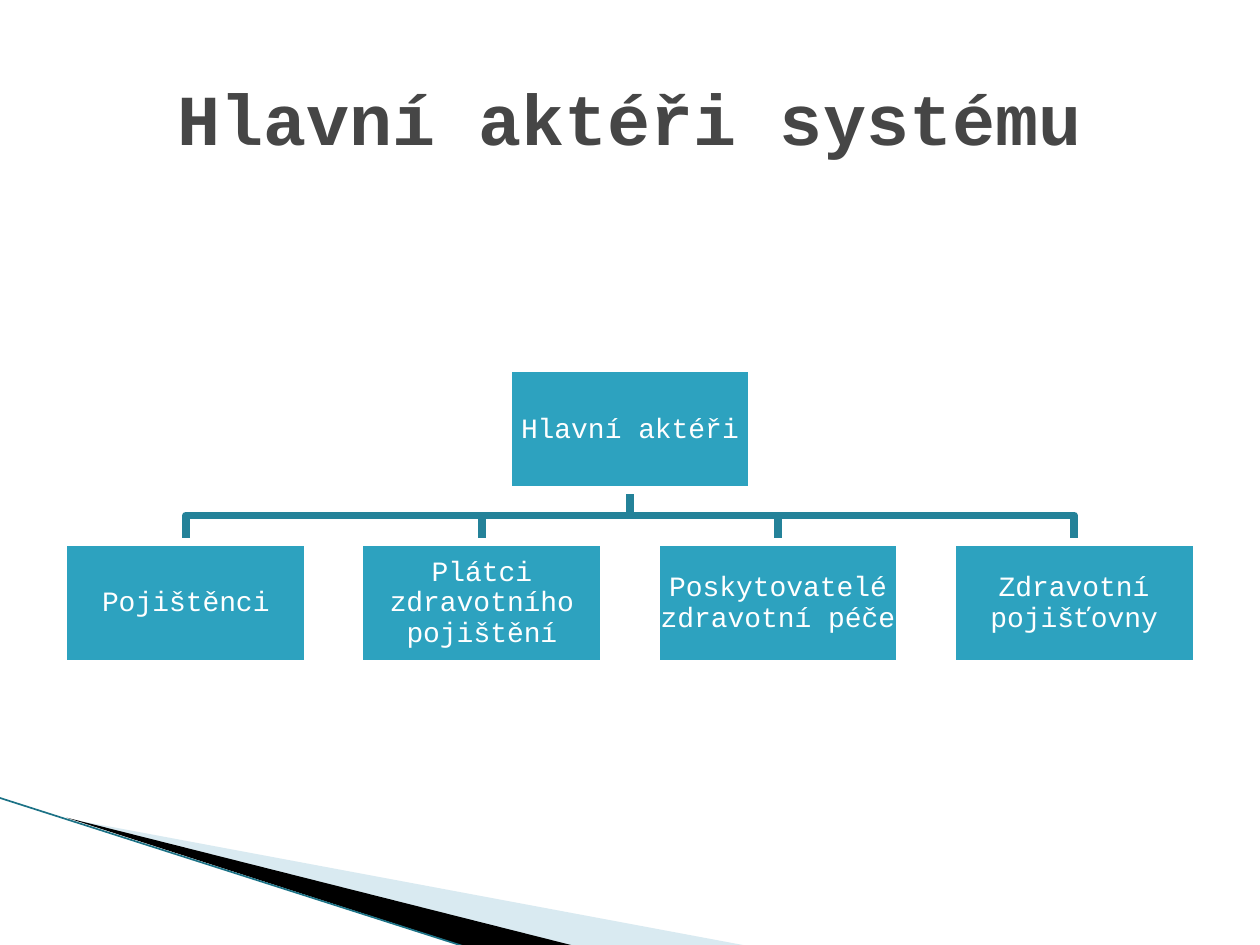
"""Build the slide with the organisation chart of the main actors of the system."""
from lxml import etree
from pptx import Presentation
from pptx.dml.color import RGBColor
from pptx.enum.shapes import MSO_CONNECTOR, MSO_SHAPE
from pptx.enum.text import MSO_ANCHOR, MSO_AUTO_SIZE, PP_ALIGN
from pptx.oxml.ns import qn
from pptx.util import Inches, Pt

THEME = {
    "title": RGBColor(0x46, 0x46, 0x46),
    "box": RGBColor(0x2D, 0xA2, 0xBF),
    "branch": RGBColor(0x24, 0x82, 0x99),
    "white": RGBColor(0xFF, 0xFF, 0xFF),
    "pale": RGBColor(0xA0, 0xCB, 0xDC),
    "dark": RGBColor(0, 0, 0),
    "edge": RGBColor(0x1C, 0x72, 0x86),
    "font": "Courier New",
    "title_size": Pt(41),
    "box_size": Pt(16),
    "chart_line": Pt(4.33),
    "edge_line": Pt(0.95),
}


def draw_outline(shapes, points, closed):
    start, *rest = [(Inches(x), Inches(y)) for x, y in points]
    builder = shapes.build_freeform(*start)
    builder.add_line_segments(rest, close=closed)
    outline = builder.convert_to_shape()
    outline.shadow.inherit = False
    return outline


def write_text(frame, text, frame_format, font_format, color):
    for name, value in frame_format.items():
        setattr(frame, name, value)
    frame.text = text
    paragraph = frame.paragraphs[0]
    paragraph.alignment = PP_ALIGN.CENTER
    for name, value in font_format.items():
        setattr(paragraph.runs[0].font, name, value)
    paragraph.runs[0].font.color.rgb = color
    return paragraph


prs = Presentation()
prs.slide_width, prs.slide_height = Inches(10), Inches(7.5)
slide = prs.slides.add_slide(prs.slide_layouts[5])
shapes = slide.shapes

heading = shapes.title
place = {"left": Inches(0.5), "top": Inches(0.3), "width": Inches(9), "height": Inches(1.25)}
for name, value in place.items():
    setattr(heading, name, value)
title_frame = {"vertical_anchor": MSO_ANCHOR.MIDDLE, "word_wrap": True,
               "auto_size": MSO_AUTO_SIZE.NONE}
title_font = {"name": THEME["font"], "size": THEME["title_size"], "bold": True}
write_text(heading.text_frame, "Hlavní aktéři systému", title_frame, title_font, THEME["title"])

wedges = [
    ("pale", [(0.55, 6.5), (5.95, 7.51), (4.56, 7.51)]),
    ("dark", [(0.53, 6.49), (4.57, 7.51), (3.72, 7.52)]),
]
for tone, corners in wedges:
    wedge = draw_outline(shapes, corners, True)
    wedge.fill.solid()
    wedge.fill.fore_color.rgb = THEME[tone]
    wedge.line.fill.background()
    if tone == "pale":
        color = wedge.fill._xPr.find(".//" + qn("a:srgbClr"))
        etree.SubElement(color, qn("a:alpha"), val="40000")

edge = shapes.add_connector(MSO_CONNECTOR.STRAIGHT, Inches(-0.01), Inches(6.33),
                            Inches(3.71), Inches(7.52))
edge.line.color.rgb = THEME["edge"]
edge.line.width = THEME["edge_line"]
etree.SubElement(edge._element.spPr, qn("a:effectLst"))

actors = ["Pojištěnci", "Plátci zdravotního pojištění",
          "Poskytovatelé zdravotní péče", "Zdravotní pojišťovny"]
box_width, box_height, pitch, center = 1.94, 0.97, 2.35, 5
root_top, actor_top, bus = 2.92, 4.3, 4.09
middles = [center + pitch * (i - (len(actors) - 1) / 2) for i in range(len(actors))]

for middle in middles:
    route = [(center, root_top + box_height), (center, bus), (middle, bus), (middle, actor_top)]
    branch = draw_outline(shapes, route, False)
    branch.fill.background()
    branch.line.color.rgb = THEME["branch"]
    branch.line.width = THEME["chart_line"]

box_frame = {"vertical_anchor": MSO_ANCHOR.MIDDLE, "word_wrap": True}
box_frame.update({f"margin_{side}": Inches(0.01) for side in ("left", "top", "right", "bottom")})
box_font = {"name": THEME["font"], "size": THEME["box_size"]}
boxes = [("Hlavní aktéři", center, root_top)]
boxes += [(actor, middle, actor_top) for actor, middle in zip(actors, middles)]
for label, middle, top in boxes:
    box = shapes.add_shape(MSO_SHAPE.RECTANGLE, Inches(middle - box_width / 2), Inches(top),
                           Inches(box_width), Inches(box_height))
    box.shadow.inherit = False
    box.fill.solid()
    box.fill.fore_color.rgb = THEME["box"]
    box.line.color.rgb = THEME["white"]
    box.line.width = THEME["chart_line"]
    paragraph = write_text(box.text_frame, label, box_frame, box_font, THEME["white"])
    paragraph.line_spacing = 0.9

prs.save("out.pptx")
